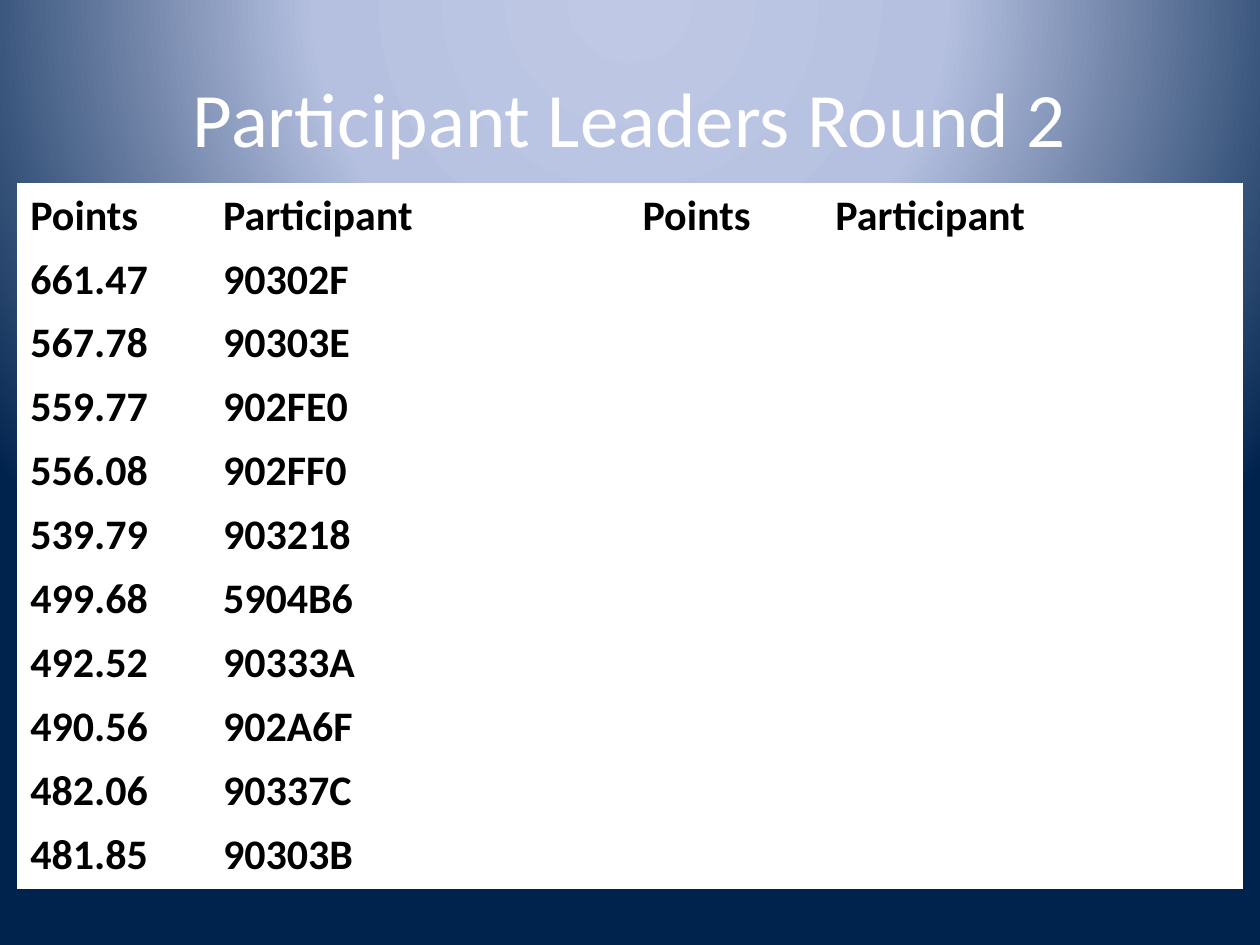
from pptx import Presentation
from pptx.dml.color import RGBColor
from pptx.enum.text import MSO_ANCHOR, PP_ALIGN
from pptx.oxml import parse_xml
from pptx.oxml.ns import nsdecls
from pptx.util import Inches, Pt

FONT = "Calibri"
WHITE, BLACK = "FFFFFF", "000000"
GLOW = [(0, "BFC9E5"), (40, "B5C0E0"), (100, "00234D")]
HEADS = ["Points", "Participant"] * 2
LEADERS = [
    ("661.47", "90302F"),
    ("567.78", "90303E"),
    ("559.77", "902FE0"),
    ("556.08", "902FF0"),
    ("539.79", "903218"),
    ("499.68", "5904B6"),
    ("492.52", "90333A"),
    ("490.56", "902A6F"),
    ("482.06", "90337C"),
    ("481.85", "90303B"),
]


def color(code):
    return RGBColor.from_string(code)


def style(para, size, code, bold):
    font = para.font
    font.name, font.size, font.bold = FONT, Pt(size), bold
    font.color.rgb = color(code)


def add_glow(slide):
    """Radial backdrop centred above the slide's top edge."""
    stops = "".join(
        f'<a:gs pos="{pos * 1000}"><a:srgbClr val="{code}"/></a:gs>'
        for pos, code in GLOW)
    slide.element.cSld.insert(0, parse_xml(
        f'<p:bg {nsdecls("p", "a")}><p:bgPr>'
        f'<a:gradFill rotWithShape="1"><a:gsLst>{stops}</a:gsLst>'
        '<a:path path="circle">'
        '<a:fillToRect l="50000" t="-80000" r="50000" b="180000"/>'
        '</a:path></a:gradFill><a:effectLst/></p:bgPr></p:bg>'))


def add_title(slide, text, box):
    title = slide.shapes.title
    title.left, title.top, title.width, title.height = map(Inches, box)
    frame = title.text_frame
    frame.text = text
    frame.vertical_anchor = MSO_ANCHOR.MIDDLE
    para = frame.paragraphs[0]
    para.alignment = PP_ALIGN.CENTER
    style(para, 44, WHITE, False)


def set_edges(cell, base):
    """White cell borders; base is the width of the bottom one."""
    props = cell._tc.get_or_add_tcPr()
    for spot, side in enumerate("LRTB"):
        width = Pt(base if side == "B" else 1)
        props.insert(spot, parse_xml(
            f'<a:ln{side} {nsdecls("a")} w="{width}"><a:solidFill>'
            f'<a:srgbClr val="{WHITE}"/></a:solidFill></a:ln{side}>'))


def add_board(slide, rows, shares, box):
    """Leader table; shares are the column widths as parts of the box."""
    left, top, width, height = map(Inches, box)
    table = slide.shapes.add_table(
        len(rows), len(shares), left, top, width, height).table
    for col, share in zip(table.columns, shares):
        col.width = int(width * share / sum(shares))
    for r, row in enumerate(rows):
        for c in range(len(shares)):
            cell = table.cell(r, c)
            cell.fill.solid()
            cell.fill.fore_color.rgb = color(WHITE)
            set_edges(cell, 3 if r == len(rows) - 1 else 1)
            if c < len(row):
                cell.text = row[c]
            style(cell.text_frame.paragraphs[0], 24, BLACK, True)


def main():
    deck = Presentation()
    deck.slide_width, deck.slide_height = Inches(10), Inches(7.5)
    slide = deck.slides.add_slide(deck.slide_layouts[5])
    add_glow(slide)
    add_title(slide, "Participant Leaders Round 2", (0.5, 0.3, 9, 1.25))
    add_board(slide, [HEADS, *LEADERS], [1.53, 3.33] * 2,
              (0.14, 1.46, 9.72, 5.5))
    deck.save("out.pptx")


if __name__ == "__main__":
    main()
